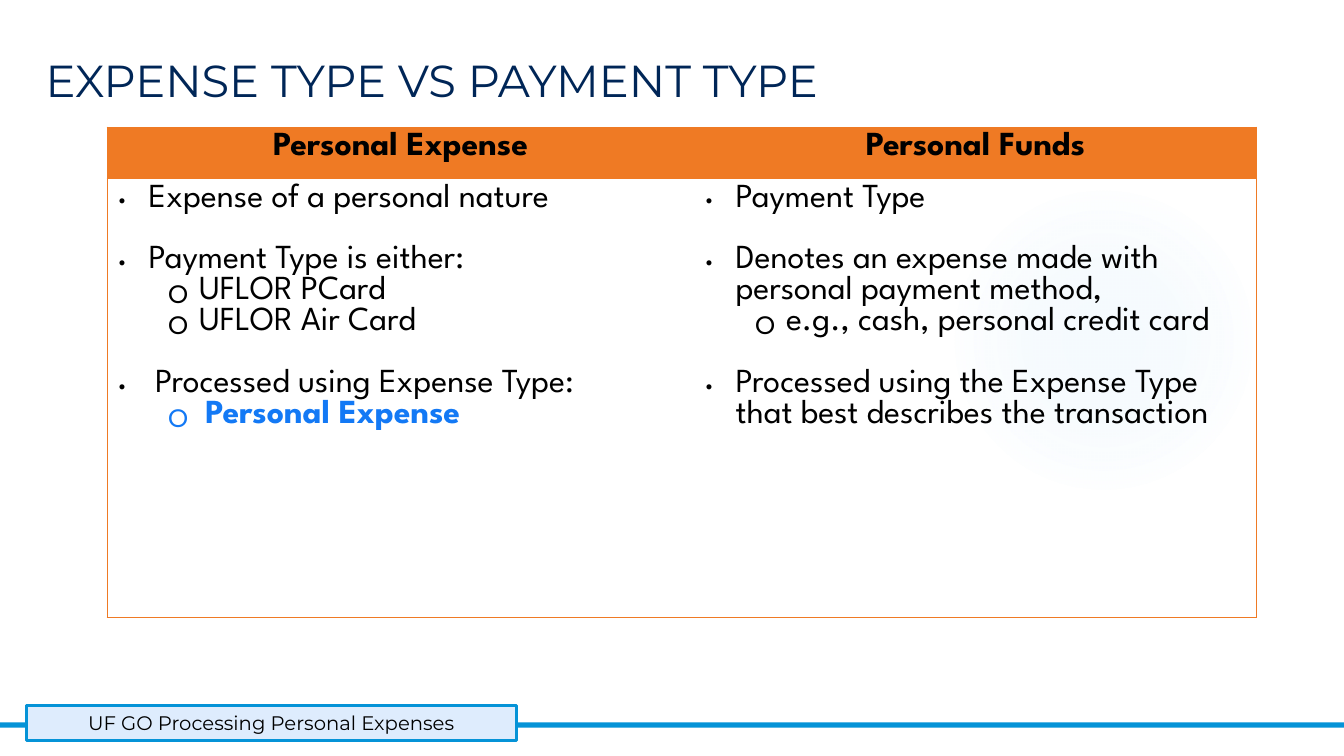
from dataclasses import dataclass

from pptx import Presentation
from pptx.dml.color import RGBColor
from pptx.enum.shapes import MSO_SHAPE as Shape
from pptx.enum.text import MSO_ANCHOR as Anchor, PP_ALIGN as Align
from pptx.oxml import parse_xml
from pptx.oxml.ns import nsdecls, qn
from pptx.util import Emu, Pt


@dataclass(frozen=True)
class Theme:
    navy: str = "002657"
    sky: str = "0593D7"
    pale: str = "DEECFD"
    glow: str = "7AC4F0"
    orange: str = "EF7A24"
    blue: str = "1379F5"
    black: str = "000000"
    heading_font: str = "Montserrat"
    table_font: str = "League Spartan"
    title_size: int = 32
    table_size: int = 24
    label_size: int = 14
    group_gap: int = 22


@dataclass(frozen=True)
class Bullet:
    text: str
    level: int = 0
    hang: int = 30
    new_group: bool = False
    accent: bool = False


def px(length):
    return Emu(length * 9525)


def element(xml):
    """Parse an XML fragment whose root tag has no namespace declaration yet."""
    tag, rest = xml.split(" ", 1)
    return parse_xml(f"{tag} {nsdecls('a')} {rest}")


class SlideBuilder:
    def __init__(self, slide, theme):
        self.slide = slide
        self.theme = theme

    def styled_run(self, paragraph, text, font, size, color, bold=False):
        run = paragraph.add_run()
        run.text = text
        for name, value in {"name": font, "size": Pt(size), "bold": bold}.items():
            setattr(run.font, name, value)
        run.font.color.rgb = RGBColor.from_string(color)

    def shape(self, kind, box, fill=None, line=None):
        shape = self.slide.shapes.add_shape(kind, *map(px, box))
        shape.shadow.inherit = False
        if fill:
            shape.fill.solid()
            shape.fill.fore_color.rgb = RGBColor.from_string(fill)
        else:
            shape.fill.background()
        if line:
            shape.line.color.rgb = RGBColor.from_string(line)
            shape.line.width = Pt(2.25)
        else:
            shape.line.fill.background()
        return shape

    def glow(self, box, stops):
        """Draw a circle that fades out; stops are (position, opacity) in percent."""
        properties = self.shape(Shape.OVAL, box).element.spPr
        colors = "".join(
            f'<a:gs pos="{position * 1000}"><a:srgbClr val="{self.theme.glow}">'
            f'<a:alpha val="{opacity * 1000}"/></a:srgbClr></a:gs>'
            for position, opacity in stops)
        properties.replace(properties.find(qn("a:noFill")), element(
            f'<a:gradFill rotWithShape="1"><a:gsLst>{colors}</a:gsLst><a:path path="circle">'
            '<a:fillToRect l="50000" t="50000" r="50000" b="50000"/></a:path></a:gradFill>'))

    def title(self, box, text):
        frame = self.slide.shapes.add_textbox(*map(px, box)).text_frame
        frame.word_wrap = True
        frame.vertical_anchor = Anchor.MIDDLE
        theme = self.theme
        self.styled_run(frame.paragraphs[0], text, theme.heading_font, theme.title_size,
                        theme.navy)

    def label(self, box, text):
        theme = self.theme
        frame = self.shape(Shape.RECTANGLE, box, theme.pale, theme.sky).text_frame
        frame.word_wrap = True
        frame.vertical_anchor = Anchor.MIDDLE
        paragraph = frame.paragraphs[0]
        paragraph.alignment = Align.CENTER
        self.styled_run(paragraph, text, theme.heading_font, theme.label_size, theme.black)

    def borders(self, cell, visible):
        """Outline the sides named in visible (any of L, R, T, B) and clear the others."""
        properties = cell._tc.get_or_add_tcPr()
        for side in "LRTB":
            fill = (f'<a:solidFill><a:srgbClr val="{self.theme.orange}"/></a:solidFill>'
                    if side in visible else "<a:noFill/>")
            properties.append(element(f'<a:ln{side} w="9525">{fill}</a:ln{side}>'))

    def bullet(self, paragraph, item):
        theme = self.theme
        color = theme.blue if item.accent else theme.black
        if item.new_group:
            paragraph.space_before = Pt(theme.group_gap)
        paragraph.level = item.level
        properties = paragraph._p.get_or_add_pPr()
        properties.set("marL", str(px(item.hang + 48 * item.level)))
        properties.set("indent", str(px(-item.hang)))
        for xml in (f'<a:buClr ><a:srgbClr val="{color}"/></a:buClr>',
                    f'<a:buFont typeface="{theme.heading_font}"/>',
                    f'<a:buChar char="{"•o"[item.level]}"/>'):
            properties.append(element(xml))
        self.styled_run(paragraph, item.text, theme.table_font, theme.table_size, color,
                        item.accent)

    def comparison(self, left, top, widths, heights, columns):
        """Add a table with one header and one bullet list for each column."""
        theme = self.theme
        box = (left, top, sum(widths), sum(heights))
        table = self.slide.shapes.add_table(2, len(columns), *map(px, box)).table
        table.first_row = table.horz_banding = False
        for row, height in zip(table.rows, heights):
            row.height = px(height)
        for index, (heading, items) in enumerate(columns.items()):
            table.columns[index].width = px(widths[index])
            outer = "LR"[index]
            header, body = table.cell(0, index), table.cell(1, index)
            for cell in (header, body):
                self.borders(cell, outer + "TB")
            header.fill.solid()
            header.fill.fore_color.rgb = RGBColor.from_string(theme.orange)
            paragraph = header.text_frame.paragraphs[0]
            paragraph.alignment = Align.CENTER
            self.styled_run(paragraph, heading, theme.table_font, theme.table_size,
                            theme.black, True)
            body.fill.background()
            frame = body.text_frame
            for number, item in enumerate(items):
                self.bullet(frame.add_paragraph() if number else frame.paragraphs[0], item)


COLUMNS = {
    "Personal Expense": [
        Bullet("Expense of a personal nature"),
        Bullet("Payment Type is either:", new_group=True),
        Bullet("UFLOR PCard", level=1),
        Bullet("UFLOR Air Card", level=1),
        Bullet("Processed using Expense Type:", hang=36, new_group=True),
        Bullet("Personal Expense", level=1, hang=36, accent=True),
    ],
    "Personal Funds": [
        Bullet("Payment Type"),
        Bullet("Denotes an expense made with personal payment method,", new_group=True),
        Bullet("e.g., cash, personal credit card", level=1),
        Bullet("Processed using the Expense Type that best describes the transaction",
               new_group=True),
    ],
}


def main():
    presentation = Presentation()
    presentation.slide_width, presentation.slide_height = px(1280), px(720)
    theme = Theme()
    builder = SlideBuilder(presentation.slides.add_slide(presentation.slide_layouts[6]), theme)
    builder.glow((903, 176, 296, 296), [(0, 7), (36, 6), (69, 0)])
    builder.title((34, 44, 1205, 63), "EXPENSE TYPE VS PAYMENT TYPE")
    builder.shape(Shape.RECTANGLE, (0, 688, 1280, 5), theme.sky)
    builder.label((25, 672, 467, 33), "UF GO Processing Personal Expenses")
    builder.comparison(102, 121, (559, 536), (49, 418), COLUMNS)
    presentation.save("out.pptx")


if __name__ == "__main__":
    main()
